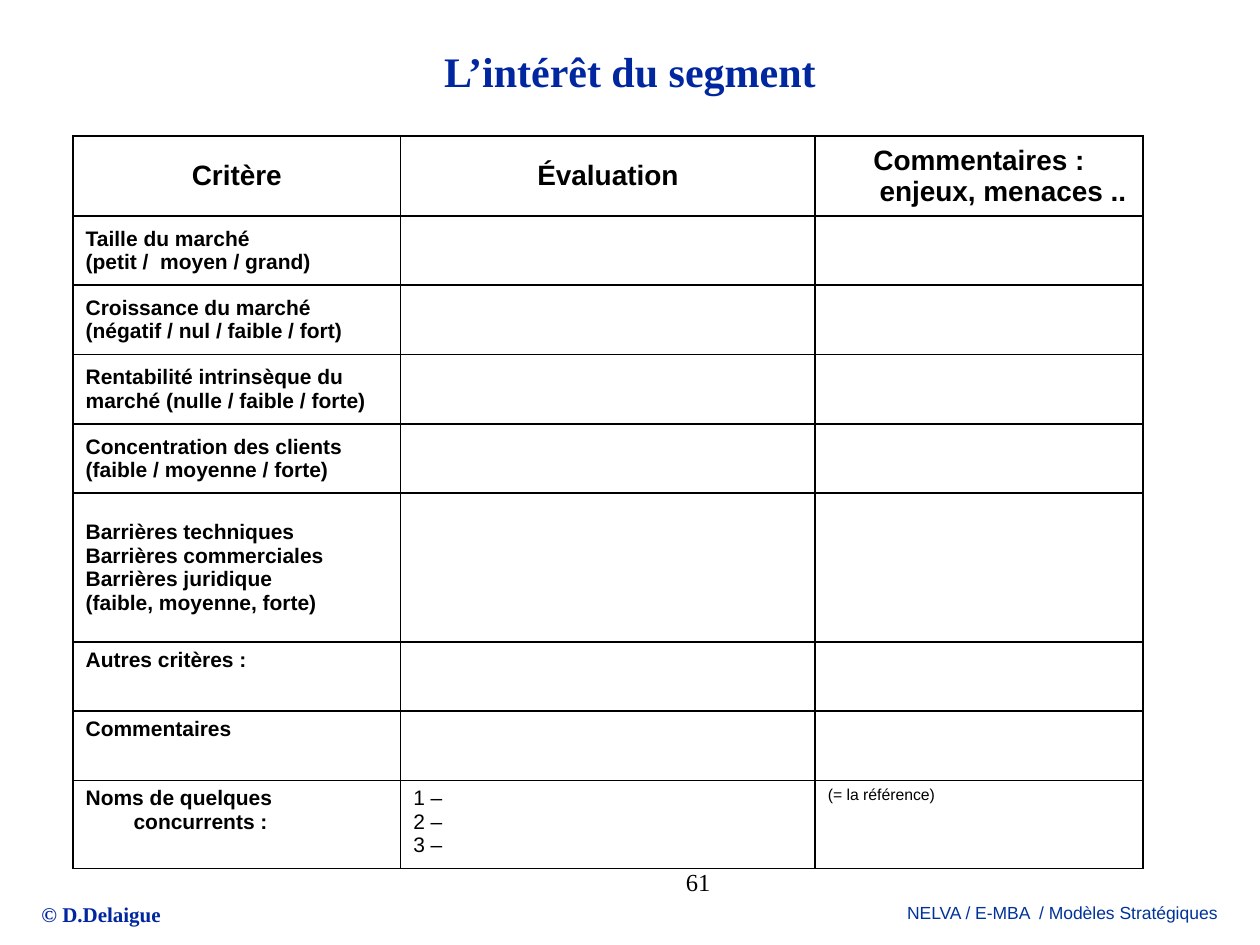
from dataclasses import dataclass

from lxml import etree
from pptx import Presentation
from pptx.dml.color import RGBColor
from pptx.enum.text import MSO_ANCHOR, MSO_AUTO_SIZE, PP_ALIGN
from pptx.oxml.ns import qn
from pptx.util import Inches, Pt

LEFT, CENTER, JUSTIFY = PP_ALIGN.LEFT, PP_ALIGN.CENTER, PP_ALIGN.JUSTIFY
TOP, MIDDLE = MSO_ANCHOR.TOP, MSO_ANCHOR.MIDDLE
FIT, FIXED = MSO_AUTO_SIZE.SHAPE_TO_FIT_TEXT, MSO_AUTO_SIZE.NONE

# The slide is a grid of 100 columns by 75 rows.
COLS, ROWS = 100, 75
SLIDE_W, SLIDE_H = Inches(10), Inches(7.5)


@dataclass(frozen=True)
class Theme:
    serif: str = "Times New Roman"
    sans: str = "Arial"
    navy: str = "00279F"
    blue: str = "003399"
    black: str = "000000"
    title: int = 24
    header: int = 16
    number: int = 14
    body: int = 12
    footer: int = 10
    note: int = 9
    border: int = 1
    hanging: float = 0.38


THEME = Theme()


@dataclass(frozen=True)
class Style:
    size: int
    font: str = THEME.sans
    color: str = THEME.black
    bold: bool = False


@dataclass(frozen=True)
class Label:
    text: str
    x: float
    y: float
    w: float
    h: float
    style: Style
    align: PP_ALIGN = CENTER
    anchor: MSO_ANCHOR = TOP
    fit: bool = False


@dataclass(frozen=True)
class CellText:
    lines: tuple[str, ...]
    style: Style = Style(THEME.body, bold=True)
    align: PP_ALIGN = LEFT
    anchor: MSO_ANCHOR = MIDDLE
    hanging: bool = True
    before: float = 0


@dataclass(frozen=True)
class Row:
    height: float
    cells: tuple[CellText, ...]


LABELS = (
    Label("© D.Delaigue", 2.3, 71.1, 11.5, 3,
          Style(THEME.body, THEME.serif, THEME.navy, True), LEFT, fit=True),
    Label("NELVA / E-MBA  / Modèles Stratégiques", 70.7, 71.1, 27.2, 2.7,
          Style(THEME.footer, color=THEME.blue), fit=True),
    Label("61", 45, 68.3, 20.8, 5, Style(THEME.number, THEME.serif)),
    Label("L’intérêt du segment", 5, 3.7, 90, 3.8,
          Style(THEME.title, THEME.serif, THEME.navy, True), anchor=MIDDLE),
)

HEADERS = ("Critère", "Évaluation", "Commentaires : enjeux, menaces .. ")
TABLE_X, TABLE_Y = 5.8, 10.8
TABLE_COLS = (26, 32.9, 26)
LINE_ROW = 5.5
TABLE_ROWS = (
    Row(6.2, tuple(CellText((h,), Style(THEME.header, bold=True), CENTER)
                   for h in HEADERS)),
    Row(LINE_ROW, (CellText(("Taille du marché", "(petit /  moyen / grand)")),)),
    Row(LINE_ROW, (CellText(("Croissance du marché",
                             "(négatif / nul / faible / fort)")),)),
    Row(LINE_ROW, (CellText(
        ("Rentabilité intrinsèque du marché (nulle / faible / forte)",),
        hanging=False),)),
    Row(LINE_ROW, (CellText(("Concentration des clients",
                             "(faible / moyenne / forte)")),)),
    Row(11.8, (CellText(("Barrières techniques", "Barrières commerciales",
                         "Barrières juridique", "(faible, moyenne, forte)")),)),
    Row(LINE_ROW, (CellText(("Autres critères :",), anchor=TOP),)),
    Row(LINE_ROW, (CellText(("Commentaires",), anchor=TOP, hanging=False,
                            before=0.2 * THEME.body),)),
    Row(6.6, (
        CellText(("Noms de quelques concurrents :",), anchor=TOP),
        CellText(("1 –", "2 –", "3 –"), Style(THEME.body), anchor=TOP),
        CellText(("(= la référence)",), Style(THEME.note), JUSTIFY, TOP),
    )),
)


def across(cols: float) -> int:
    return round(SLIDE_W * cols / COLS)


def down(rows: float) -> int:
    return round(SLIDE_H * rows / ROWS)


def add_run(p, text: str, style: Style) -> None:
    r = p.add_run()
    r.text = text
    r.font.name = style.font
    r.font.size = Pt(style.size)
    r.font.bold = style.bold
    r.font.color.rgb = RGBColor.from_string(style.color)


def add_label(slide, label: Label) -> None:
    s = slide.shapes.add_textbox(across(label.x), down(label.y),
                                 across(label.w), down(label.h))
    tf = s.text_frame
    tf.word_wrap = not label.fit
    tf.auto_size = FIT if label.fit else FIXED
    tf.vertical_anchor = label.anchor
    p = tf.paragraphs[0]
    p.alignment = label.align
    add_run(p, label.text, label.style)


def add_borders(cell) -> None:
    """Rule all four sides; the lines go before the fill in the cell's XML."""
    tc_pr = cell._tc.get_or_add_tcPr()
    for i, side in enumerate(("lnL", "lnR", "lnT", "lnB")):
        ln = etree.Element(qn(f"a:{side}"), w=str(Pt(THEME.border)))
        fill = etree.SubElement(ln, qn("a:solidFill"))
        etree.SubElement(fill, qn("a:srgbClr"), val=THEME.black)
        tc_pr.insert(i, ln)


def fill_cell(cell, content: CellText) -> None:
    cell.vertical_anchor = content.anchor
    tf = cell.text_frame
    for i, line in enumerate(content.lines):
        p = tf.add_paragraph() if i else tf.paragraphs[0]
        p.alignment = content.align
        p.space_before = Pt(content.before)
        if content.hanging:
            p_pr = p._p.get_or_add_pPr()
            indent = Inches(THEME.hanging)
            p_pr.set("marL", str(indent))
            p_pr.set("indent", str(-indent))
        add_run(p, line, content.style)


def add_criteria_table(slide) -> None:
    frame = slide.shapes.add_table(
        len(TABLE_ROWS), len(TABLE_COLS), across(TABLE_X), down(TABLE_Y),
        across(sum(TABLE_COLS)), down(sum(row.height for row in TABLE_ROWS)))
    table = frame.table
    table.first_row = table.horz_banding = False
    for column, width in zip(table.columns, TABLE_COLS):
        column.width = across(width)
    for table_row, row in zip(table.rows, TABLE_ROWS):
        table_row.height = down(row.height)
        for cell in table_row.cells:
            cell.fill.background()
            add_borders(cell)
        for cell, content in zip(table_row.cells, row.cells):
            fill_cell(cell, content)


def main() -> None:
    prs = Presentation()
    prs.slide_width, prs.slide_height = SLIDE_W, SLIDE_H
    slide = prs.slides.add_slide(prs.slide_layouts[6])
    for label in LABELS:
        add_label(slide, label)
    add_criteria_table(slide)
    prs.save("out.pptx")


if __name__ == "__main__":
    main()
